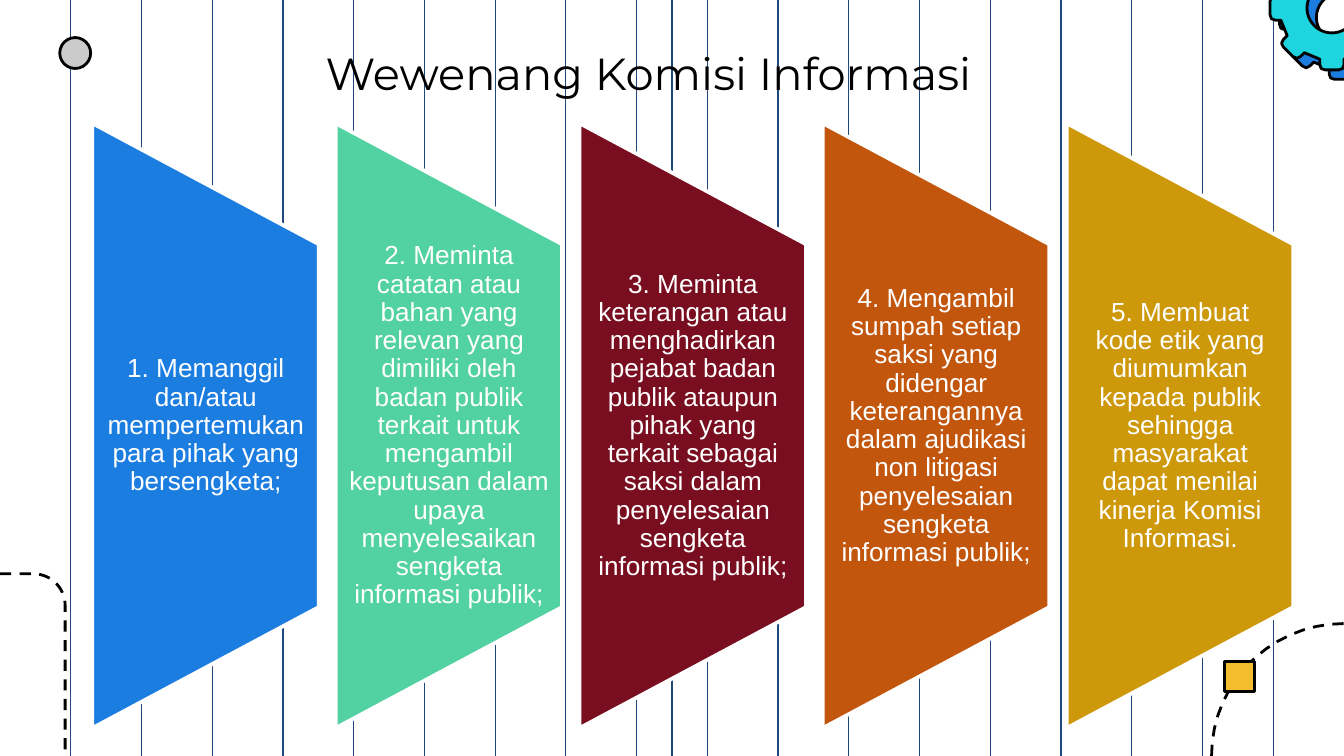
from math import cos, radians, sin

from pptx import Presentation
from pptx.dml.color import RGBColor
from pptx.enum.dml import MSO_LINE
from pptx.enum.shapes import MSO_CONNECTOR, MSO_SHAPE
from pptx.enum.text import MSO_ANCHOR, PP_ALIGN
from pptx.oxml.ns import qn
from pptx.util import Pt
from lxml.etree import SubElement

PX = 4572  # EMU per px, 200 px to the inch
WIDTH, HEIGHT = 2000, 1125
COLORS = {
    "black": "000000", "white": "FFFFFF", "navy": "1F497D", "gray": "CBCBCB",
    "blue": "1C7DE1", "cyan": "1ED4DE", "yellow": "F4BD2D", "green": "52D1A2",
    "maroon": "790E20", "orange": "C2560D", "gold": "CE980B",
}
COLORS = {name: RGBColor.from_string(value) for name, value in COLORS.items()}

deck = Presentation()
deck.slide_width, deck.slide_height = WIDTH * PX, HEIGHT * PX
page = deck.slides.add_slide(deck.slide_layouts[6])


def add_outline(*contours, fill=None, closed=True):
    """Draw contours of px points as one black-edged shape; unfilled ones are dashed."""
    contours = [[(x * PX, y * PX) for x, y in points] for points in contours]
    builder = page.shapes.build_freeform(*contours[0][0], scale=1.0)
    builder.add_line_segments(contours[0][1:], close=closed)
    for points in contours[1:]:
        builder.move_to(*points[0])
        builder.add_line_segments(points[1:], close=closed)
    outline = builder.convert_to_shape()
    outline.shadow.inherit = False
    outline.line.color.rgb = COLORS["black"]
    outline.line.width = Pt(1.5)
    if fill:
        outline.fill.solid()
        outline.fill.fore_color.rgb = COLORS[fill]
    else:
        outline.fill.background()
        outline.line.dash_style = MSO_LINE.DASH


def add_text(text, *, at, size, font, color, anchor=MSO_ANCHOR.TOP,
             insets=(20, 10, 20, 10), line_spacing=None, space_after=0):
    box = page.shapes.add_textbox(*(value * PX for value in at))
    frame = box.text_frame
    frame.word_wrap = True
    frame.vertical_anchor = anchor
    (frame.margin_left, frame.margin_top,
     frame.margin_right, frame.margin_bottom) = (value * PX for value in insets)
    para = frame.paragraphs[0]
    para.alignment = PP_ALIGN.CENTER
    para.line_spacing = line_spacing
    para.space_after = Pt(space_after)
    span = para.add_run()
    span.text = text
    span.font.size = Pt(size)
    span.font.name = font
    span.font.color.rgb = COLORS[color]


# Background rules: an even row of 18, plus one at the centre
for x in [round(WIDTH * i / 19) for i in range(1, 19)] + [WIDTH // 2]:
    rule = page.shapes.add_connector(MSO_CONNECTOR.STRAIGHT, x * PX, 0, x * PX, HEIGHT * PX)
    rule.line.color.rgb = COLORS["navy"]
    rule.line.width = Pt(0.75)
    SubElement(rule._element.spPr, qn("a:effectLst"))

# Two stacked gears in the corner: one tooth turned eight times around a hole
circle = [(cos(radians(a)), sin(radians(a))) for a in range(0, 360, 6)]
tooth = [(-18, -76), (-18, -84), (-16, -90), (-10, -92),
         (10, -92), (16, -90), (18, -84), (18, -76)]
for center_x, center_y, color in [(1996, 26, "blue"), (1982, 12, "cyan")]:
    rim = []
    for turn in range(0, 360, 45):
        c, s = cos(radians(turn)), sin(radians(turn))
        rim += [(center_x + x * c - y * s, center_y + x * s + y * c) for x, y in tooth]
    hole = [(center_x + 37 * x, center_y + 37 * y) for x, y in circle]
    add_outline(hole, rim, fill=color)

# Dashed curves in the lower corners, with a square marker on the right one
add_outline([(WIDTH + 197 * x, HEIGHT + 197 * y) for x, y in circle[30:46]], closed=False)
add_outline([(1822, 984), (1822, 1029), (1867, 1029), (1867, 984)], fill="yellow")
bend = [(50 + 47 * x, 901 + 47 * y) for x, y in circle[45:] + circle[:1]]
add_outline([(0, 854)] + bend + [(97, HEIGHT)], closed=False)

# Dot at the upper left
dot = page.shapes.add_shape(MSO_SHAPE.OVAL, 89 * PX, 56 * PX, 46 * PX, 46 * PX)
dot.shadow.inherit = False
dot.fill.solid()
dot.fill.fore_color.rgb = COLORS["gray"]
dot.line.color.rgb = COLORS["black"]
dot.line.width = Pt(1.5)

# Title
add_text("Wewenang Komisi Informasi", at=(389, 58, 1152, 100), size=24,
         font="Montserrat", color="black")

# Five panels: a turned trapezoid with upright text over it
panels = [
    ("blue", "1. Memanggil dan/atau mempertemukan para pihak yang bersengketa;"),
    ("green", "2. Meminta catatan atau bahan yang relevan yang dimiliki oleh badan publik "
              "terkait untuk mengambil keputusan dalam upaya menyelesaikan sengketa "
              "informasi publik;"),
    ("maroon", "3. Meminta keterangan atau menghadirkan pejabat badan publik ataupun pihak "
               "yang terkait sebagai saksi dalam penyelesaian sengketa informasi publik;"),
    ("orange", "4. Mengambil sumpah setiap saksi yang didengar keterangannya dalam "
               "ajudikasi non litigasi penyelesaian sengketa informasi publik;"),
    ("gold", "5. Membuat kode etik yang diumumkan kepada publik sehingga masyarakat dapat "
             "menilai kinerja Komisi Informasi."),
]
for i, (color, text) in enumerate(panels):
    left = 137 + 725 * i // 2
    panel = page.shapes.add_shape(MSO_SHAPE.FLOWCHART_MANUAL_OPERATION,
                                  (left - 281) * PX, 465 * PX, 900 * PX, 337 * PX)
    panel.rotation = 270
    panel.shadow.inherit = False
    panel.fill.solid()
    panel.fill.fore_color.rgb = COLORS[color]
    panel.line.color.rgb = COLORS["white"]
    panel.line.width = Pt(2)
    add_text(text, at=(left, 364, 337, 540), size=14, font="Arial", color="white",
             anchor=MSO_ANCHOR.MIDDLE, insets=(20, 0, 18, 0), line_spacing=0.9, space_after=5)

deck.save("out.pptx")
